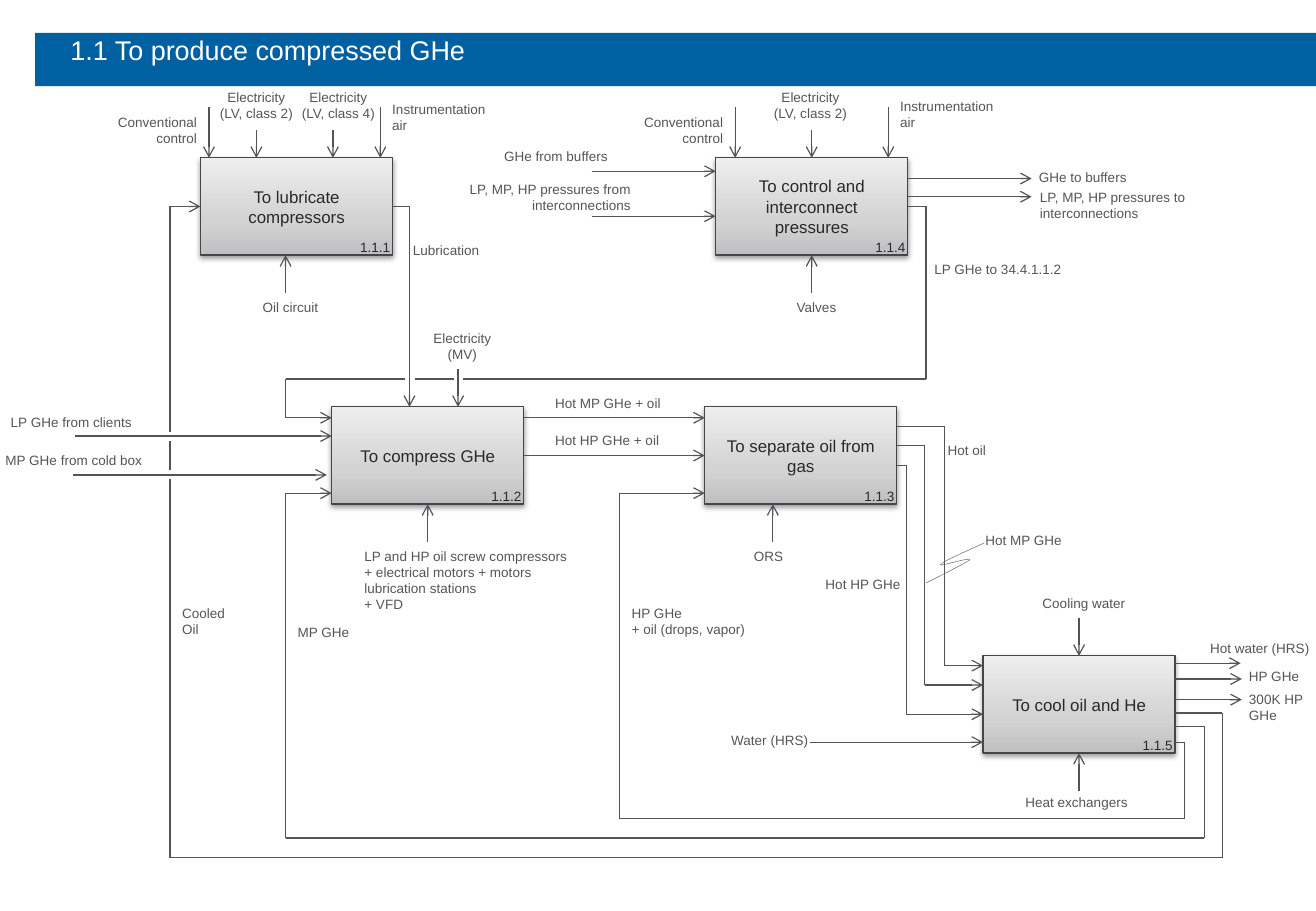
from itertools import pairwise

from pptx import Presentation
from pptx.dml.color import RGBColor
from pptx.enum.shapes import MSO_CONNECTOR, MSO_SHAPE
from pptx.enum.text import MSO_ANCHOR, PP_ALIGN
from pptx.oxml import parse_xml
from pptx.oxml.ns import nsdecls
from pptx.util import Pt

LEFT, CENTER, RIGHT = PP_ALIGN.LEFT, PP_ALIGN.CENTER, PP_ALIGN.RIGHT
TOP, MIDDLE = MSO_ANCHOR.TOP, MSO_ANCHOR.MIDDLE
RECT, STRAIGHT = MSO_SHAPE.RECTANGLE, MSO_CONNECTOR.STRAIGHT

PX = 9144  # EMU; 100 px to the inch
FONT = "Arial"
COLORS = {"banner": "0060A1", "white": "FFFFFF", "border": "45454A", "flow": "535358",
          "label": "55555A", "box_text": "2A2A2D", "shadow": "000000"}
GRADIENT = [(0, "C0C0C2"), (35, "D3D3D4"), (100, "EEEEEF")]

TITLE = "1.1 To produce compressed GHe"
BOX_W, BOX_H = 158, 80
BOXES = [  # left, top, function, number
    (589, 130, "To control and interconnect pressures", "1.1.4"),
    (165, 130, "To lubricate compressors", "1.1.1"),
    (580, 335, "To separate oil from gas", "1.1.3"),
    (273, 335, "To compress GHe", "1.1.2"),
    (809, 540, "To cool oil and He", "1.1.5"),
]

# Corner points of each flow; the arrowhead is at the last one
FLOWS = [
    [(967, 587), (1006, 587), (1006, 706), (140, 706), (140, 170), (165, 170)],
    [(967, 598), (991, 598), (991, 690), (235, 690), (235, 406), (273, 406)],
    [(967, 611), (975, 611), (975, 674), (510, 674), (510, 406), (580, 406)],
    [(747, 170), (762, 170), (762, 312), (235, 312), (235, 344), (273, 344)],
    [(738, 351), (777, 351), (777, 548), (809, 548)],
    [(738, 367), (761, 367), (761, 564), (809, 564)],
    [(738, 383), (746, 383), (746, 588), (809, 588)],
    [(431, 344), (580, 344)], [(431, 375), (580, 375)],
    [(487, 141), (589, 141)], [(487, 178), (589, 178)],
    [(747, 147), (849, 147)], [(747, 162), (849, 162)],
    [(667, 611), (809, 611)],
    [(967, 546), (1021, 546)], [(967, 559), (1022, 559)], [(967, 576), (1022, 576)],
    [(172, 88), (172, 130)], [(211, 107), (211, 130)],
    [(274, 107), (274, 130)], [(313, 88), (313, 130)],
    [(605, 88), (605, 130)], [(668, 107), (668, 130)], [(731, 88), (731, 130)],
    [(888, 509), (888, 540)], [(888, 651), (888, 620)],
    [(235, 241), (235, 210)], [(668, 241), (668, 210)],
    [(352, 446), (352, 415)], [(636, 446), (636, 415)],
]
GAPS = [(335, 296, 5, 31), (375, 296, 5, 31), (116, 357, 47, 5), (116, 388, 47, 5)]
CROSSING_FLOWS = [
    [(323, 170), (337, 170), (337, 335)],
    [(377, 304), (377, 335)],
    [(62, 359), (273, 359)],
    [(60, 391), (269, 391)],
]
CALLOUT_START = (810, 447)
CALLOUT_CURVES = [  # two control points and an end point each
    [(793, 455), (776, 462), (774, 465)],
    [(772, 467), (800, 458), (798, 461)],
    [(796, 463), (768, 477), (762, 480)],
]

HEIGHTS = {1: 24, 2: 37, 4: 64}  # by number of text rows
LABELS = [  # left, top, width, rows, alignment, text
    (-1, 336, 126, 1, LEFT, "LP GHe from clients"),
    (-7, 367, 134, 1, RIGHT, "MP GHe from cold box"),
    (447, 320, 126, 1, LEFT, "Hot MP GHe + oil"),
    (447, 351, 106, 1, LEFT, "Hot HP GHe + oil"),
    (140, 493, 63, 2, LEFT, "Cooled Oil"),
    (330, 194, 87, 1, LEFT, "Lubrication"),
    (235, 509, 71, 1, LEFT, "MP GHe"),
    (510, 493, 128, 2, LEFT, "HP GHe\n+ oil (drops, vapor)"),
    (770, 359, 91, 1, LEFT, "Hot oil"),
    (660, 469, 91, 1, RIGHT, "Hot HP GHe"),
    (801, 433, 91, 1, LEFT, "Hot MP GHe"),
    (565, 598, 110, 1, RIGHT, "Water (HRS)"),
    (986, 522, 103, 1, LEFT, "Hot water (HRS)"),
    (1018, 545, 73, 1, LEFT, "HP GHe"),
    (1018, 564, 69, 2, LEFT, "300K HP GHe"),
    (841, 485, 102, 1, CENTER, "Cooling water"),
    (776, 649, 220, 1, CENTER, "Heat exchangers"),
    (290, 446, 189, 4, LEFT, "LP and HP oil screw compressors\n"
     "+ electrical motors + motors lubrication stations\n+ VFD"),
    (172, 241, 134, 1, CENTER, "Oil circuit"),
    (605, 241, 134, 1, CENTER, "Valves"),
    (605, 446, 55, 1, CENTER, "ORS"),
    (337, 267, 87, 2, CENTER, "Electricity\n(MV)"),
    (164, 68, 94, 2, CENTER, "Electricity\n(LV, class 2)"),
    (235, 68, 87, 2, CENTER, "Electricity\n(LV, class 4)"),
    (620, 68, 94, 2, CENTER, "Electricity\n(LV, class 2)"),
    (85, 89, 87, 2, RIGHT, "Conventional control"),
    (518, 89, 87, 2, RIGHT, "Conventional control"),
    (313, 78, 110, 2, LEFT, "Instrumentation air"),
    (731, 76, 110, 2, LEFT, "Instrumentation air"),
    (405, 117, 126, 1, LEFT, "GHe from buffers"),
    (368, 144, 161, 2, RIGHT, "LP, MP, HP pressures from interconnections"),
    (845, 134, 118, 1, LEFT, "GHe to buffers"),
    (846, 151, 161, 2, LEFT, "LP, MP, HP pressures to interconnections"),
    (759, 210, 205, 1, LEFT, "LP GHe to 34.4.1.1.2"),
]


def px(*lengths):
    return [round(n * PX) for n in lengths]


def rgb(name):
    return RGBColor.from_string(COLORS[name])


def write(tf, text, size=8, color="label", align=LEFT, anchor=TOP):
    tf.word_wrap = True
    tf.vertical_anchor = anchor
    tf.text = text
    for p in tf.paragraphs:
        p.alignment = align
        p.font.name, p.font.size = FONT, Pt(size)
        p.font.color.rgb = rgb(color)


def add_text(s, x, y, w, h, text, **fmt):
    write(s.shapes.add_textbox(*px(x, y, w, h)).text_frame, text, **fmt)


def add_rect(s, x, y, w, h, fill, line=None, width=2):
    sp = s.shapes.add_shape(RECT, *px(x, y, w, h))
    sp.shadow.inherit = False
    sp.fill.solid()
    sp.fill.fore_color.rgb = rgb(fill)
    if line:
        sp.line.color.rgb, sp.line.width = rgb(line), Pt(width)
    else:
        sp.line.fill.background()
    return sp


def add_box(s, x, y, text, number):
    sp = add_rect(s, x, y, BOX_W, BOX_H, "white", "border", 0.75)
    sp.fill.gradient()
    sp.fill.gradient_angle = 90
    stops = "".join(f'<a:gs pos="{pos * 1000}"><a:srgbClr val="{c}"/></a:gs>' for pos, c in GRADIENT)
    gs_list = sp.element.spPr.find(".//{*}gsLst")
    gs_list.getparent().replace(gs_list, parse_xml(f'<a:gsLst {nsdecls("a")}>{stops}</a:gsLst>'))
    sp.element.spPr.find("{*}effectLst").append(parse_xml(
        f'<a:outerShdw {nsdecls("a")} blurRad="40000" dist="20000" dir="5400000" rotWithShape="0">'
        f'<a:srgbClr val="{COLORS["shadow"]}"><a:alpha val="38000"/></a:srgbClr></a:outerShdw>'))
    write(sp.text_frame, text, size=10, color="box_text", align=CENTER, anchor=MIDDLE)
    add_text(s, x + 63, y + 60, 103, 27, number, color="box_text", align=RIGHT, anchor=MIDDLE)
    cx, cy = x + BOX_W // 2, y + BOX_H // 2
    sides = [(cx, y), (x, cy), (cx, y + BOX_H), (x + BOX_W, cy)]
    return {point: (sp, side) for side, point in enumerate(sides)}


def add_flow(s, points, joints):
    """Draw straight segments, joined to a box where they meet the middle of its side."""
    for start, end in pairwise(points):
        c = s.shapes.add_connector(STRAIGHT, *px(*start, *end))
        c.line.color.rgb, c.line.width = rgb("flow"), Pt(0.75)
        if start in joints:
            c.begin_connect(*joints[start])
        if end in joints:
            c.end_connect(*joints[end])
        c.element.spPr.append(parse_xml(f'<a:effectLst {nsdecls("a")}/>'))
    c.line._get_or_add_ln().append(parse_xml(f'<a:tailEnd {nsdecls("a")} type="arrow"/>'))


def add_callout(s, start, curves, steps=8):
    """Trace cubic curves with short straight pieces."""
    points, p0 = [], start
    for p1, p2, p3 in curves:
        for t in (i / steps for i in range(1, steps + 1)):
            u = 1 - t
            points.append(px(*(u**3 * a + 3 * u * u * t * b + 3 * u * t * t * c + t**3 * d
                               for a, b, c, d in zip(p0, p1, p2, p3))))
        p0 = p3
    builder = s.shapes.build_freeform(*px(*start))
    builder.add_line_segments(points, close=False)
    sp = builder.convert_to_shape()
    sp.shadow.inherit = False
    sp.fill.background()
    sp.line.color.rgb, sp.line.width = rgb("label"), Pt(0.25)


prs = Presentation()
prs.slide_width, prs.slide_height = px(1083, 750)
s = prs.slides.add_slide(prs.slide_layouts[5])

title = s.shapes.title
title.left, title.top, title.width, title.height = px(58, 28, 975, 39)
tf = title.text_frame
tf.margin_left = tf.margin_top = tf.margin_right = tf.margin_bottom = 0
write(tf, TITLE, size=16, color="white")
title.element.addprevious(add_rect(s, 29, 27, 1054, 44, "banner").element)

joints = {}
for box in BOXES:
    joints.update(add_box(s, *box))
for flow in FLOWS:
    add_flow(s, flow, joints)
for gap in GAPS:
    add_rect(s, *gap, "white", "white")
for flow in CROSSING_FLOWS:
    add_flow(s, flow, joints)
add_callout(s, CALLOUT_START, CALLOUT_CURVES)
for x, y, w, rows, align, text in LABELS:
    add_text(s, x, y, w, HEIGHTS[rows], text, align=align)

prs.save("out.pptx")
